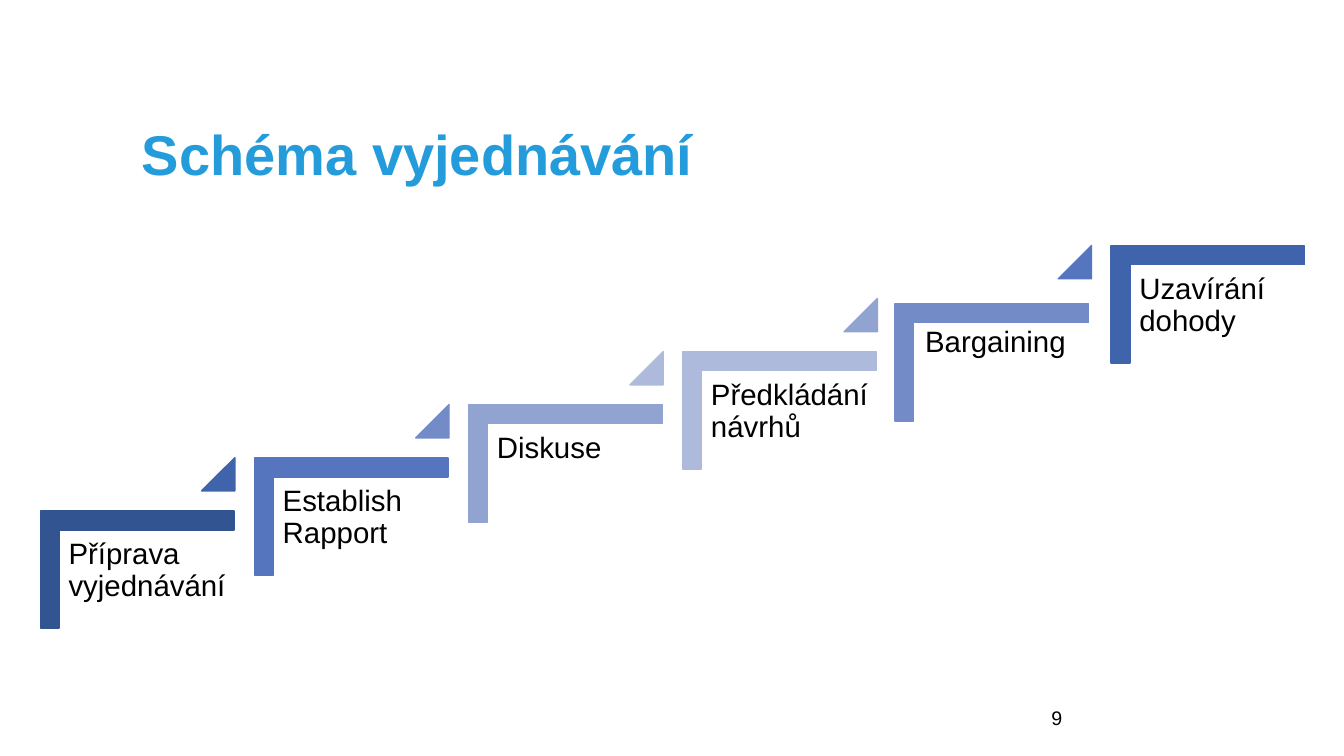
"""Build the staircase slide showing the stages of a negotiation."""
from pptx import Presentation
from pptx.dml.color import RGBColor
from pptx.enum import shapes, text
from pptx.util import Inches, Pt

TITLE = "Schéma vyjednávání"
PAGE = "9"
STEPS = [
    {"label": "Příprava vyjednávání", "corner": "325491", "triangle": "3F64AC"},
    {"label": "Establish Rapport", "corner": "5576BE", "triangle": "738CC7"},
    {"label": "Diskuse", "corner": "91A3D1", "triangle": "AEBADC"},
    {"label": "Předkládání návrhů", "corner": "AEBADC", "triangle": "91A3D1"},
    {"label": "Bargaining", "corner": "738CC7", "triangle": "5576BE", "nudge": (-0.02, 0.05)},
    {"label": "Uzavírání dohody", "corner": "3F64AC"},
]
THEME = {
    "font": "Arial", "title": "249CDC", "text": "000000",
    "title_size": 40, "label_size": 21, "page_size": 14,
}
RUN, RISE = 2.124, 0.526
CORNER = (0.78, 4.69, 1.16, 1.92)
LABEL = (0.59, 5.26, 1.74, 1.52)
TRIANGLE = (2.0, 4.54, 0.33, 0.33)


def add_text(s, words, box, size, color=THEME["text"], bold=False, spacing=1.0,
             anchor=text.MSO_ANCHOR.TOP, inset=(0.1, 0.05, 0.1, 0.05)):
    tf = s.shapes.add_textbox(*map(Inches, box)).text_frame
    tf.word_wrap = True
    tf.vertical_anchor = anchor
    tf.margin_left, tf.margin_top, tf.margin_right, tf.margin_bottom = map(Inches, inset)
    p = tf.paragraphs[0]
    p.line_spacing = spacing
    r = p.add_run()
    r.text = words
    r.font.name = THEME["font"]
    r.font.size = Pt(size)
    r.font.bold = bold
    r.font.color.rgb = RGBColor.from_string(color)


def add_block(s, kind, box, color, adjustments, rotation=0):
    sp = s.shapes.add_shape(kind, *map(Inches, box))
    sp.rotation = rotation
    sp.shadow.inherit = False
    for i, value in enumerate(adjustments):
        sp.adjustments[i] = value
    sp.fill.solid()
    sp.fill.fore_color.rgb = sp.line.color.rgb = RGBColor.from_string(color)
    sp.line.width = Pt(1)


def climb(box, i, nudge=(0, 0)):
    left, top, width, height = box
    return left + i * RUN + nudge[0], top - i * RISE + nudge[1], width, height


def main():
    prs = Presentation()
    prs.slide_width, prs.slide_height = Inches(13.33), Inches(7.5)
    s = prs.slides.add_slide(prs.slide_layouts[6])
    add_text(s, TITLE, (1.31, 0.77, 9.88, 1.58), THEME["title_size"], THEME["title"],
             bold=True, spacing=0.9, anchor=text.MSO_ANCHOR.MIDDLE)
    add_text(s, PAGE, (10.33, 6.95, 3, 0.4), THEME["page_size"])
    for i, step in enumerate(STEPS):
        add_block(s, shapes.MSO_SHAPE.CORNER, climb(CORNER, i, step.get("nudge", (0, 0))),
                  step["corner"], (0.161, 0.161), rotation=90)
        add_text(s, step["label"], climb(LABEL, i), THEME["label_size"],
                 spacing=0.9, inset=(0.09, 0.09, 0.05, 0.09))
        if "triangle" in step:
            add_block(s, shapes.MSO_SHAPE.ISOSCELES_TRIANGLE, climb(TRIANGLE, i),
                      step["triangle"], (1,))
    prs.save("out.pptx")


if __name__ == "__main__":
    main()
